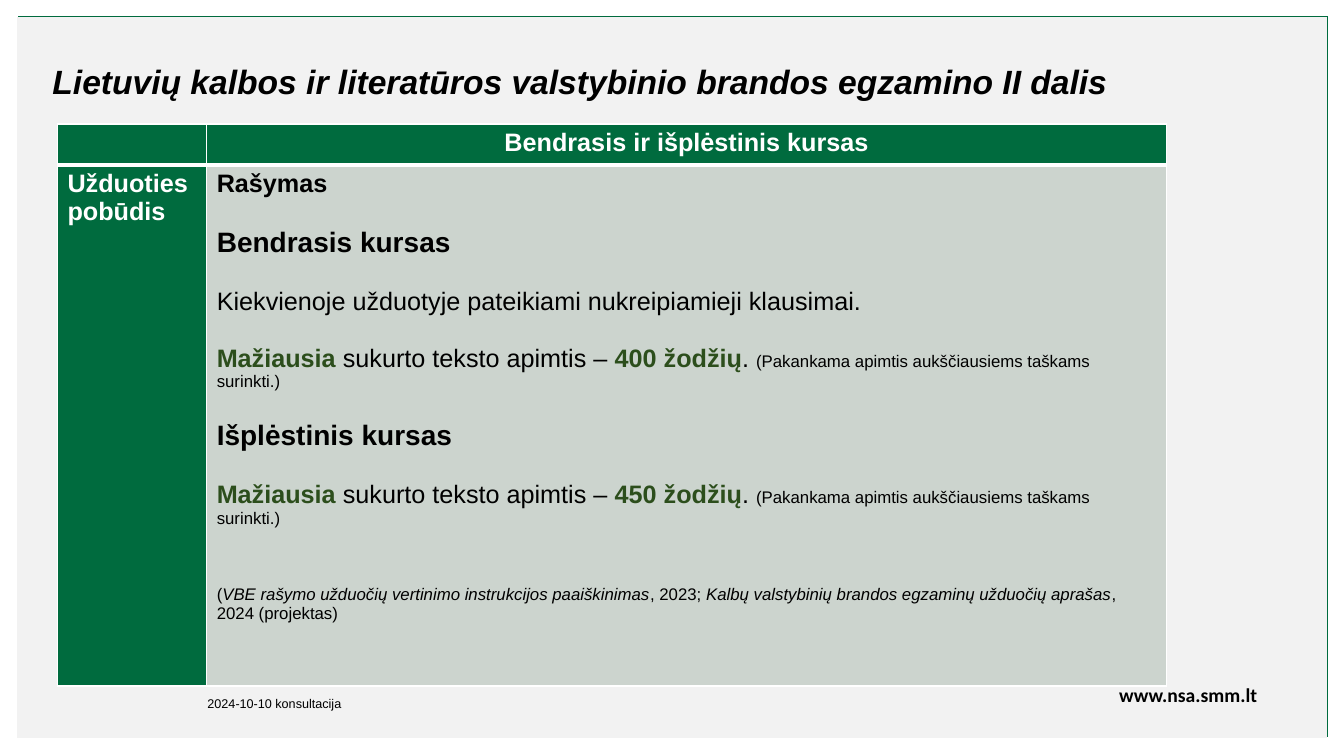
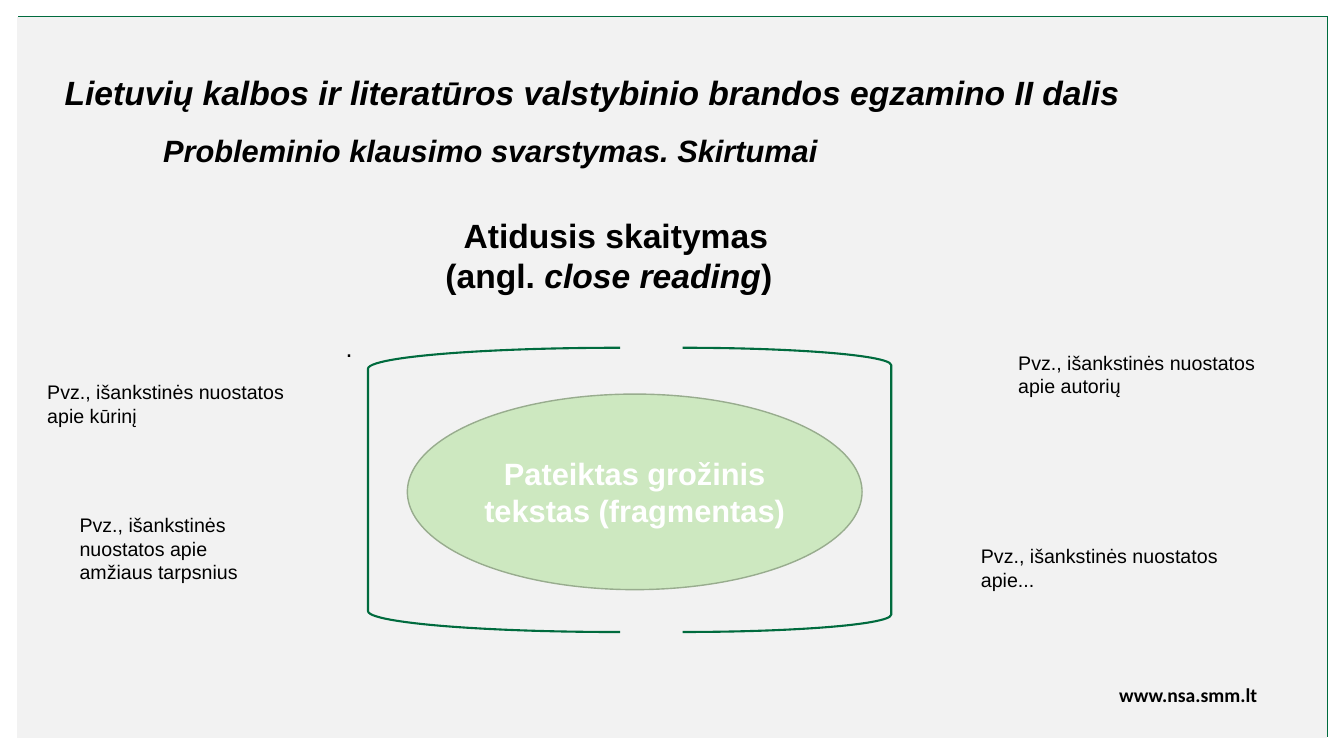
from dataclasses import dataclass

from lxml import etree
from pptx import Presentation
from pptx.dml.color import RGBColor
from pptx.enum.shapes import MSO_SHAPE
from pptx.enum.text import MSO_ANCHOR, MSO_AUTO_SIZE, PP_ALIGN
from pptx.oxml.ns import qn
from pptx.util import Inches, Pt

RECTANGLE, ELLIPSE = MSO_SHAPE.RECTANGLE, MSO_SHAPE.OVAL
LEFT_BRACKET, RIGHT_BRACKET = MSO_SHAPE.LEFT_BRACKET, MSO_SHAPE.RIGHT_BRACKET
LEFT, CENTER, RIGHT, JUSTIFY = PP_ALIGN.LEFT, PP_ALIGN.CENTER, PP_ALIGN.RIGHT, PP_ALIGN.JUSTIFY
TOP, MIDDLE = MSO_ANCHOR.TOP, MSO_ANCHOR.MIDDLE
NO_AUTOFIT = MSO_AUTO_SIZE.NONE
TITLE_ONLY = 5


@dataclass(frozen=True)
class Theme:
    font: str = "Arial"
    footer_font: str = "Calibri"
    green: str = "006B3E"
    dark_green: str = "2C4E1C"
    pale_green: str = "CDE8C0"
    ellipse_line: str = "98AC8E"
    cell: str = "CCD4CE"
    panel: str = "F2F2F2"
    white: str = "FFFFFF"
    black: str = "000000"
    title: int = 24
    subtitle: int = 22
    heading: int = 20
    body: int = 18
    note: int = 14
    small: int = 12
    date: int = 9
    line_gap: float = 20.7


@dataclass(frozen=True)
class Box:
    left: float
    top: float
    width: float
    height: float

    def inner(self, left, top, width, height):
        return Box(self.left + left, self.top + top, width, height)

    def lengths(self):
        return [Inches(value) for value in (self.left, self.top, self.width, self.height)]


THEME = Theme()
TITLE_TEXT = "Lietuvių kalbos ir literatūros valstybinio brandos egzamino II dalis"
TITLE_STYLE = {"size": THEME.title, "bold": True, "italic": True}
HEADING = {"size": THEME.heading, "bold": True}
HEADER_CELL = {"color": THEME.white, "bold": True}
HIGHLIGHT = {"color": THEME.dark_green, "bold": True}
SMALL = {"size": THEME.small}
SMALL_ITALIC = {"size": THEME.small, "italic": True}
NOTE = {"size": THEME.note}


def set_attributes(target, formats):
    for name, value in formats.items():
        setattr(target, name, value)


def format_font(font, style):
    """Apply a style, with the theme's body text as the base."""
    values = {"name": THEME.font, "size": THEME.body, "bold": False,
              "italic": False, "color": THEME.black, **style}
    font.color.rgb = RGBColor.from_string(values.pop("color"))
    set_attributes(font, {**values, "size": Pt(values["size"])})


def write_text(frame, paragraphs):
    """Fill a frame; each paragraph is a list of (text, style) and its format."""
    for index, (runs, formats) in enumerate(paragraphs):
        paragraph = frame.add_paragraph() if index else frame.paragraphs[0]
        set_attributes(paragraph, formats)
        for text, style in runs:
            run = paragraph.add_run()
            run.text = text
            format_font(run.font, style)


def add_text(slide, box, paragraphs, wrap=True):
    shape = slide.shapes.add_textbox(*box.lengths())
    shape.text_frame.word_wrap = wrap
    write_text(shape.text_frame, paragraphs)
    return shape


def add_line_of_text(slide, box, text, style, alignment=LEFT, wrap=True):
    return add_text(slide, box, [([(text, style)], {"alignment": alignment})], wrap)


def add_plain_shape(slide, kind, box, fill=None, line=None, line_width=1.0):
    shape = slide.shapes.add_shape(kind, *box.lengths())
    shape.shadow.inherit = False
    if fill:
        shape.fill.solid()
        shape.fill.fore_color.rgb = RGBColor.from_string(fill)
    else:
        shape.fill.background()
    if line:
        shape.line.color.rgb = RGBColor.from_string(line)
        shape.line.width = Pt(line_width)
    else:
        shape.line.fill.background()
    return shape


def move_backdrop_to_layout(slide, layout):
    """Draw the panel and web address, then hand them to the shared layout."""
    panel = Box(0.17, 0.17, 12.99, 7.15)
    backdrop = [
        add_plain_shape(slide, RECTANGLE, panel.inner(0.01, -0.01, 12.99, 7.15), THEME.green),
        add_plain_shape(slide, RECTANGLE, panel, THEME.panel),
        add_line_of_text(slide, panel.inner(9.2, 6.56, 3.2, 0.34), "www.nsa.smm.lt",
                         {"name": THEME.footer_font, "size": THEME.note, "bold": True}, RIGHT),
    ]
    title, *unused = list(layout.placeholders)
    for placeholder in unused:
        placeholder.element.getparent().remove(placeholder.element)
    for shape in backdrop:
        title.element.addprevious(shape.element)


def set_title(slide, box):
    title = slide.shapes.title
    set_attributes(title, dict(zip(("left", "top", "width", "height"), box.lengths())))
    set_attributes(title.text_frame, {"word_wrap": True, "vertical_anchor": TOP,
                                      "auto_size": NO_AUTOFIT})
    write_text(title.text_frame, [([(TITLE_TEXT, TITLE_STYLE)], {"alignment": LEFT})])


def set_cell_borders(cell, top, bottom):
    properties = cell._tc.get_or_add_tcPr()
    for tag, width in (("lnL", 1), ("lnR", 1), ("lnT", top), ("lnB", bottom)):
        line = etree.SubElement(properties, qn(f"a:{tag}"), w=str(Pt(width)))
        fill = etree.SubElement(line, qn("a:solidFill"))
        etree.SubElement(fill, qn("a:srgbClr"), val=THEME.white)


def fill_cell(cell, fill, paragraphs, top=1, bottom=1):
    set_cell_borders(cell, top, bottom)
    cell.fill.solid()
    cell.fill.fore_color.rgb = RGBColor.from_string(fill)
    write_text(cell.text_frame, paragraphs)


def volume_runs(words):
    return [("Mažiausia", HIGHLIGHT), (" sukurto teksto apimtis – ", {}),
            (f"{words} žodžių", HIGHLIGHT), (". ", {}),
            ("(Pakankama apimtis aukščiausiems taškams surinkti.)", SMALL)]


def task_paragraphs():
    gap = {"space_before": Pt(THEME.line_gap)}
    source = [
        ("(", SMALL),
        ("VBE rašymo užduočių vertinimo instrukcijos paaiškinimas", SMALL_ITALIC),
        (", 2023; ", SMALL),
        ("Kalbų valstybinių brandos egzaminų užduočių aprašas", SMALL_ITALIC),
        (", 2024 (projektas)", SMALL),
    ]
    return [
        ([("Rašymas", {"bold": True})], {}),
        ([("Bendrasis kursas", HEADING)], gap),
        ([("Kiekvienoje užduotyje pateikiami nukreipiamieji klausimai.", {})], gap),
        (volume_runs(400), gap),
        ([("Išplėstinis kursas", HEADING)], gap),
        (volume_runs(450), gap),
        (source, {"space_before": Pt(2 * THEME.line_gap)}),
    ]


def add_task_table(slide, box):
    label_width, header_height = 1.48, 0.4
    table = slide.shapes.add_table(2, 2, *box.lengths()).table
    for column, width in zip(table.columns, (label_width, box.width - label_width)):
        column.width = Inches(width)
    for row, height in zip(table.rows, (header_height, box.height - header_height)):
        row.height = Inches(height)
    header = [([("Bendrasis ir išplėstinis kursas", HEADER_CELL)], {"alignment": CENTER})]
    label = [([("Užduoties pobūdis", HEADER_CELL)], {})]
    fill_cell(table.cell(0, 0), THEME.green, [], bottom=3)
    fill_cell(table.cell(0, 1), THEME.green, header, bottom=3)
    fill_cell(table.cell(1, 0), THEME.green, label, top=3)
    fill_cell(table.cell(1, 1), THEME.cell, task_paragraphs(), top=3)


def add_reading_heading(slide, box):
    heading = {"size": THEME.title, "bold": True}
    shape = add_text(slide, box, [
        ([("Atidusis skaitymas", heading)], {}),
        ([("(angl. ", heading), ("close reading", TITLE_STYLE), (")", heading)], {}),
    ])
    first_line = shape.text_frame.paragraphs[0]
    first_line._p.get_or_add_pPr().set("marL", str(Inches(0.18)))


def add_bracketed_text(slide, box):
    """Place the ellipse with the text between two brackets."""
    ellipse = add_plain_shape(slide, ELLIPSE, box.inner(0.39, 0.46, 4.51, 1.94),
                              THEME.pale_green, THEME.ellipse_line)
    set_attributes(ellipse.text_frame, {"word_wrap": True, "vertical_anchor": MIDDLE})
    write_text(ellipse.text_frame, [
        ([("Pateiktas grožinis tekstas (fragmentas)",
           {"size": THEME.subtitle, "bold": True, "color": THEME.white})],
         {"alignment": CENTER})])
    right_width = 2.07
    for kind, left, width in ((RIGHT_BRACKET, box.width - right_width, right_width),
                              (LEFT_BRACKET, 0, 2.5)):
        add_plain_shape(slide, kind, box.inner(left, 0, width, box.height),
                        line=THEME.green, line_width=1.5)


def add_preconceptions(slide, box):
    """Place the notes around the bracketed text."""
    for left, top, width, height, subject in (
            (9.63, 0, 2.65, 0.57, "autorių"),
            (0, 0.29, 2.67, 0.57, "kūrinį"),
            (0.32, 1.61, 2.19, 0.81, "amžiaus tarpsnius")):
        add_line_of_text(slide, box.inner(left, top, width, height),
                         f"Pvz., išankstinės nuostatos apie {subject}", NOTE)
    add_line_of_text(slide, box.inner(9.26, 1.92, 2.71, 0.57),
                     "Pvz., išankstinės nuostatos apie...", NOTE)


def build_task_slide(slide):
    set_title(slide, Box(0.42, 0.55, 11.3, 0.5))
    add_task_table(slide, Box(0.57, 1.23, 11, 5.57))
    add_line_of_text(slide, Box(1.96, 6.85, 1.54, 0.25), "2024-10-10 konsultacija",
                     {"size": THEME.date}, wrap=False)


def build_reading_slide(slide):
    set_title(slide, Box(0.54, 0.66, 11.28, 0.5))
    add_line_of_text(slide, Box(3.33, 3.25, 6.67, 0.4), ".", {}, JUSTIFY)
    add_line_of_text(slide, Box(1.52, 1.26, 9.07, 0.47),
                     "Probleminio klausimo svarstymas. Skirtumai",
                     {**TITLE_STYLE, "size": THEME.subtitle})
    add_reading_heading(slide, Box(4.32, 2.08, 3.74, 0.91))
    add_bracketed_text(slide, Box(3.65, 3.45, 5.19, 2.82))
    add_preconceptions(slide, Box(0.37, 3.43, 12.28, 2.49))


def main():
    presentation = Presentation()
    presentation.slide_width, presentation.slide_height = Inches(13.33), Inches(7.5)
    layout = presentation.slide_layouts[TITLE_ONLY]
    task_slide, reading_slide = [presentation.slides.add_slide(layout) for _ in range(2)]
    move_backdrop_to_layout(task_slide, layout)
    build_task_slide(task_slide)
    build_reading_slide(reading_slide)
    presentation.save("out.pptx")


if __name__ == "__main__":
    main()
